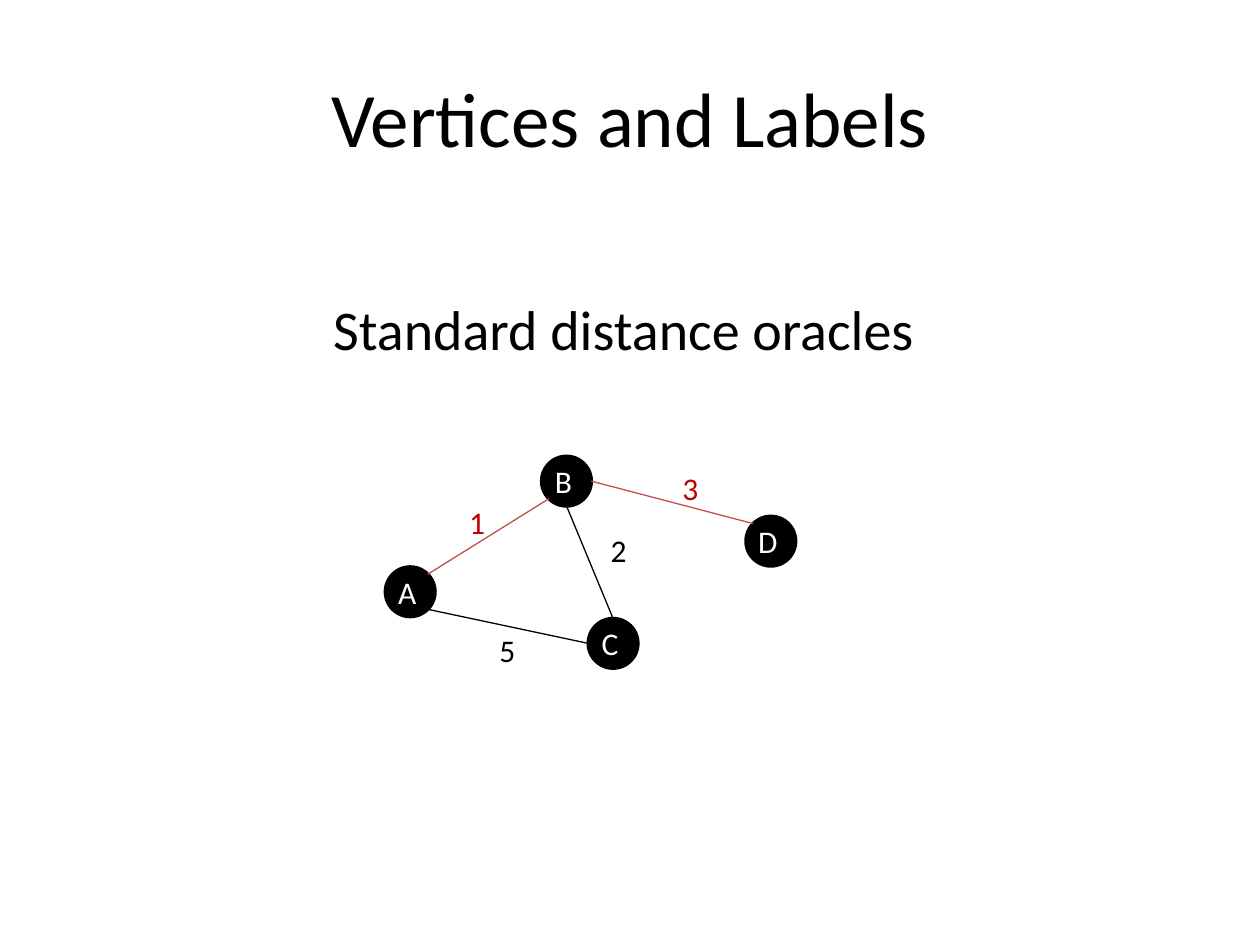
import math

import lxml.etree
import pptx
import pptx.dml.color
import pptx.enum.shapes
import pptx.enum.text
import pptx.oxml.ns
import pptx.util

Cm = pptx.util.Cm
Pt = pptx.util.Pt
ALIGN = pptx.enum.text.PP_ALIGN
ANCHOR = pptx.enum.text.MSO_ANCHOR
BLACK, WHITE, RED, LINE_RED = "000000", "FFFFFF", "C00000", "C0504D"


def color(value):
    return pptx.dml.color.RGBColor.from_string(value)


def write(shape, text, size, text_color, alignment, anchor, margins):
    frame = shape.text_frame
    frame.word_wrap = True
    frame.vertical_anchor = anchor
    frame.margin_left, frame.margin_top, frame.margin_right, frame.margin_bottom = [
        Cm(margin) for margin in margins
    ]
    paragraph = frame.paragraphs[0]
    paragraph.alignment = alignment
    run = paragraph.add_run()
    run.text = text
    run.font.name = "Calibri"
    run.font.size = Pt(size)
    run.font.color.rgb = color(text_color)


presentation = pptx.Presentation()
presentation.slide_width = Cm(25.4)
presentation.slide_height = Cm(19.05)
slide = presentation.slides.add_slide(presentation.slide_layouts[6])

# Title and subtitle
title = slide.shapes.add_textbox(Cm(1.27), Cm(0.76), Cm(22.86), Cm(3.18))
write(title, "Vertices and Labels", 44, BLACK, ALIGN.CENTER, ANCHOR.MIDDLE,
      (0.25, 0.13, 0.25, 0.13))
subtitle = slide.shapes.add_textbox(Cm(1.27), Cm(4.45), Cm(22.86), Cm(12.57))
write(subtitle, "Standard distance oracles ", 32, BLACK, ALIGN.CENTER, ANCHOR.TOP,
      (0.25, 1.73, 0.25, 0.13))

# Vertices: centre of each circle
radius = 0.5
vertices = {"A": (8.27, 11.93), "D": (15.54, 10.91), "B": (11.42, 9.7), "C": (12.36, 12.97)}
for name, (x, y) in vertices.items():
    vertex = slide.shapes.add_shape(
        pptx.enum.shapes.MSO_SHAPE.OVAL,
        Cm(x - radius), Cm(y - radius), Cm(2 * radius), Cm(2 * radius))
    vertex.shadow.inherit = False
    vertex.fill.solid()
    vertex.fill.fore_color.rgb = color(BLACK)
    vertex.line.color.rgb = color(BLACK)
    vertex.line.width = Pt(2)
    write(vertex, name, 18, WHITE, ALIGN.CENTER, ANCHOR.MIDDLE, (0, 0, 0.12, 0))

# Edges: each end is a vertex and the angle on its circle, clockwise from the right
edges = [
    ("A", -45, "B", 135, LINE_RED),
    ("B", 90, "C", -90, BLACK),
    ("A", 45, "C", 180, BLACK),
    ("B", 0, "D", -135, LINE_RED),
]
for start, start_angle, end, end_angle, edge_color in edges:
    points = []
    for name, angle in ((start, start_angle), (end, end_angle)):
        x, y = vertices[name]
        points.append(Cm(x + radius * math.cos(math.radians(angle))))
        points.append(Cm(y + radius * math.sin(math.radians(angle))))
    edge = slide.shapes.add_connector(pptx.enum.shapes.MSO_CONNECTOR.STRAIGHT, *points)
    edge.line.color.rgb = color(edge_color)
    edge.line.width = Pt(0.75)
    lxml.etree.SubElement(edge._element.spPr, pptx.oxml.ns.qn("a:effectLst"))

# Edge weights
weights = [
    ("1", 9.42, 10.01, 0.61, RED),
    ("2", 11.86, 10.57, 1.02, BLACK),
    ("5", 9.42, 12.6, 1.22, BLACK),
    ("3", 13.11, 9.32, 1.22, RED),
]
for text, left, top, width, weight_color in weights:
    weight = slide.shapes.add_textbox(Cm(left), Cm(top), Cm(width), Cm(1.02))
    write(weight, text, 18, weight_color, ALIGN.RIGHT, ANCHOR.TOP, (0, 0.13, 0.25, 0.13))

presentation.save("out.pptx")
